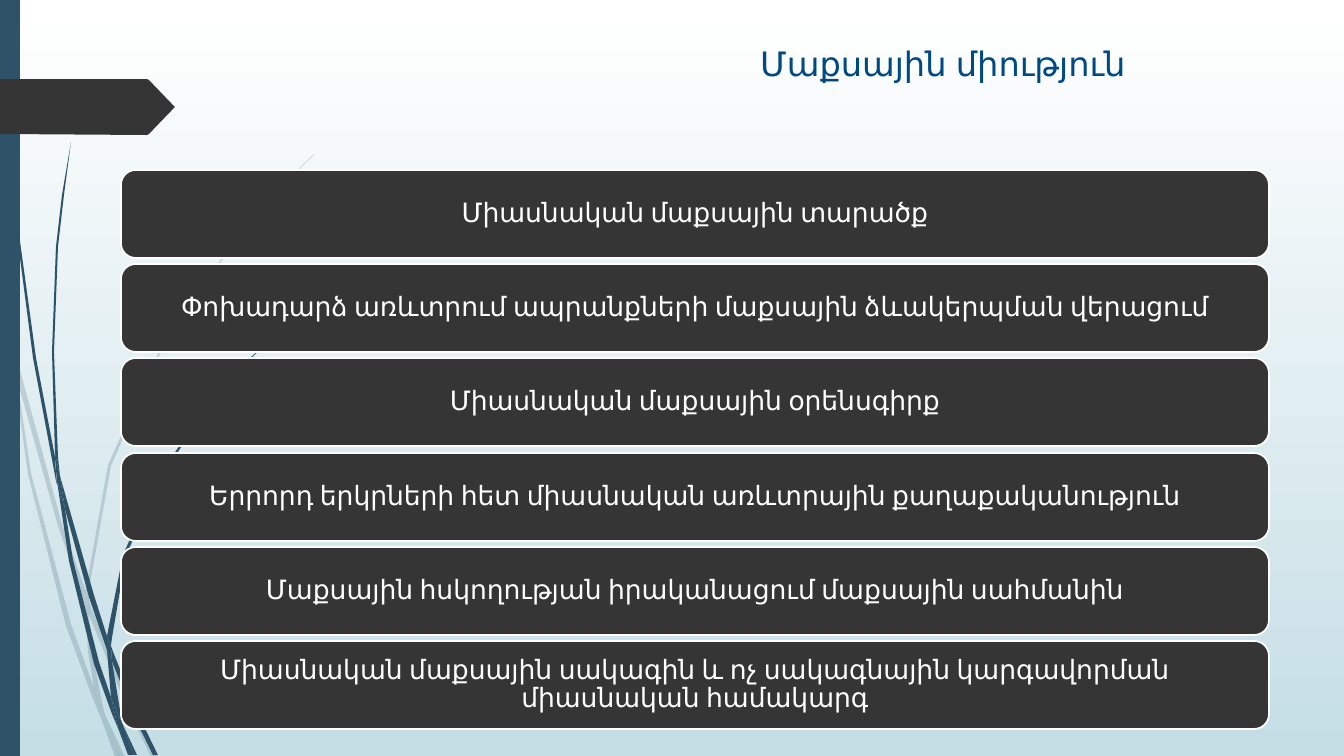
import dataclasses

import pptx
import pptx.dml.color
import pptx.enum.shapes
import pptx.enum.text
import pptx.oxml
import pptx.oxml.ns
import pptx.util

EMU_PER_PX = 914400 / 100.8
SLIDE_W, SLIDE_H = 1344, 756
TITLE_ONLY = 5


@dataclasses.dataclass(frozen=True)
class Theme:
    accent: str = "2E5369"
    dark: str = "353535"
    light: str = "FFFFFF"
    sky: str = "C5DEE5"
    heading: str = "004A84"
    heading_font: str = "Arial"
    body_font: str = "League Spartan"
    heading_size: int = 24
    body_size: int = 19
    outline: float = 1.25


HEADING = "Մաքսային միություն"
FEATURES = [
    "Միասնական մաքսային տարածք",
    "Փոխադարձ առևտրում ապրանքների մաքսային ձևակերպման վերացում",
    "Միասնական մաքսային օրենսգիրք",
    "Երրորդ երկրների հետ միասնական առևտրային քաղաքականություն",
    "Մաքսային հսկողության իրականացում մաքսային սահմանին",
    "Միասնական մաքսային սակագին և ոչ սակագնային կարգավորման միասնական համակարգ",
]

PALE_GRASS = [
    [(11, 353), (9, 325), (0, 284), (0, 301), (10, 347)],
    [(58, 526), (85, 604), (86, 591), (62, 524), (14, 348), (17, 379)],
    [(93, 612), (89, 601), (89, 615), (124, 700), (151, 757), (156, 757), (128, 698)],
    [(120, 757), (125, 757), (106, 717)],
    [(94, 688), (71, 624), (31, 473), (17, 379), (11, 353), (28, 474), (66, 626),
     (93, 699), (102, 720), (100, 713)],
    [(85, 604), (88, 651), (94, 688), (97, 698), (106, 717), (104, 712), (92, 651),
     (89, 615), (89, 613)],
    [(89, 589), (111, 466), (161, 352), (231, 247), (270, 200), (292, 176), (314, 155),
     (314, 154), (291, 176), (270, 199), (230, 246), (159, 351), (108, 465), (86, 589),
     (86, 591), (89, 601)],
    [(102, 720), (115, 757), (120, 757)],
    [(89, 613), (89, 615), (89, 601), (86, 591), (85, 604)],
    [(97, 698), (94, 688), (100, 713), (102, 720), (120, 757), (106, 717)],
]
DARK_GRASS = [
    [(7, 111), (17, 235), (33, 358), (56, 481), (57, 485), (55, 461), (55, 457),
     (36, 358), (19, 234), (8, 110), (5, 48), (4, 0), (3, 0), (4, 48)],
    [(89, 597), (107, 650), (107, 638), (107, 636), (94, 595), (60, 476), (65, 509)],
    [(114, 654), (111, 646), (112, 661), (133, 714), (153, 755), (158, 755), (137, 712)],
    [(111, 697), (99, 662), (73, 560), (65, 509), (57, 481), (69, 561), (94, 664),
     (112, 714), (118, 728), (117, 723)],
    [(60, 476), (58, 457), (54, 352), (58, 247), (64, 195), (71, 142), (62, 195),
     (56, 247), (52, 352), (55, 453)],
    [(134, 755), (137, 755), (123, 725)],
    [(57, 481), (65, 509), (60, 476), (55, 453), (55, 457)],
    [(112, 638), (126, 556), (159, 480), (207, 409), (233, 377), (247, 362), (263, 347),
     (262, 347), (247, 361), (233, 376), (206, 408), (157, 478), (123, 555), (107, 636),
     (111, 646)],
    [(118, 728), (128, 755), (132, 755)],
    [(107, 650), (111, 697), (117, 712), (123, 725), (122, 722), (112, 661), (110, 656)],
    [(107, 650), (110, 656), (112, 661), (111, 646), (107, 636), (107, 638)],
    [(117, 712), (111, 697), (117, 723), (118, 728), (131, 755), (134, 755), (123, 725)],
]
PAGE_TAG = [(175, 107), (173, 109), (149, 134), (147, 135), (0, 134), (0, 79),
            (147, 79), (149, 80), (173, 105)]


def px(length):
    return pptx.util.Emu(round(length * EMU_PER_PX))


def rgb(colour):
    return pptx.dml.color.RGBColor.from_string(colour)


def assign(target, values):
    for name, value in values.items():
        setattr(target, name, value)


class SlideBuilder:
    def __init__(self, slide, theme):
        self.slide, self.theme = slide, theme

    def background(self):
        fill = self.slide.background.fill
        fill.gradient()
        fill.gradient_angle = 270
        ends = (0, self.theme.light), (1, self.theme.sky)
        for stop, (position, colour) in zip(fill.gradient_stops, ends):
            stop.position = position
            stop.color.rgb = rgb(colour)

    def paint(self, shape, colour, opacity=100):
        shape.shadow.inherit = False
        shape.fill.solid()
        shape.fill.fore_color.rgb = rgb(colour)
        shape.line.fill.background()
        if opacity < 100:
            solid = shape._element.spPr.find(pptx.oxml.ns.qn("a:solidFill"))
            solid[0].append(pptx.oxml.parse_xml(
                f'<a:alpha {pptx.oxml.ns.nsdecls("a")} val="{opacity * 1000}"/>'))

    def outline(self, points, colour, opacity=100):
        """Draw a filled closed polygon through the points."""
        pen = self.slide.shapes.build_freeform(*points[0], scale=EMU_PER_PX)
        pen.add_line_segments(points[1:], close=True)
        self.paint(pen.convert_to_shape(), colour, opacity)

    def box(self, preset, left, top, width, height, colour):
        shape = self.slide.shapes.add_shape(
            preset, px(left), px(top), px(width), px(height))
        self.paint(shape, colour)
        return shape

    def set_text(self, frame, text, align, font, margins):
        assign(frame, {"word_wrap": True,
                       "vertical_anchor": pptx.enum.text.MSO_ANCHOR.MIDDLE,
                       "auto_size": pptx.enum.text.MSO_AUTO_SIZE.NONE, **margins})
        frame.text = text
        paragraph = frame.paragraphs[0]
        paragraph.alignment = align
        name, size, colour = font
        assign(paragraph.runs[0].font, {"name": name, "size": pptx.util.Pt(size)})
        paragraph.runs[0].font.color.rgb = rgb(colour)
        return paragraph

    def title(self, text, left, top, width, height):
        heading = self.slide.shapes.title
        assign(heading, {"left": px(left), "top": px(top),
                         "width": px(width), "height": px(height)})
        theme = self.theme
        self.set_text(heading.text_frame, text, pptx.enum.text.PP_ALIGN.RIGHT,
                      (theme.heading_font, theme.heading_size, theme.heading), {})

    def card(self, text, left, top, width, height):
        theme = self.theme
        card = self.box(pptx.enum.shapes.MSO_SHAPE.ROUNDED_RECTANGLE,
                        left, top, width, height, theme.dark)
        card.line.color.rgb = rgb(theme.light)
        card.line.width = pptx.util.Pt(theme.outline)
        sides = "left", "top", "right", "bottom"
        paragraph = self.set_text(card.text_frame, text, pptx.enum.text.PP_ALIGN.CENTER,
                                  (theme.body_font, theme.body_size, theme.light),
                                  {f"margin_{side}": px(8) for side in sides})
        paragraph.line_spacing = 0.9


def main():
    deck = pptx.Presentation()
    assign(deck, {"slide_width": px(SLIDE_W), "slide_height": px(SLIDE_H)})
    theme = Theme()
    page = SlideBuilder(deck.slides.add_slide(deck.slide_layouts[TITLE_ONLY]), theme)

    page.background()
    for blades, opacity in ((PALE_GRASS, 20), (DARK_GRASS, 100)):
        for blade in blades:
            page.outline(blade, theme.accent, opacity)
    page.box(pptx.enum.shapes.MSO_SHAPE.RECTANGLE, 0, 0, 20, SLIDE_H, theme.accent)
    page.outline(PAGE_TAG, theme.dark)

    page.title(HEADING, 323, 21, 813, 85)
    first_top, last_top = 170, 641
    pitch = (last_top - first_top) / (len(FEATURES) - 1)
    for row, feature in enumerate(FEATURES):
        page.card(feature, 121, round(first_top + row * pitch), 1148, 88)

    deck.save("out.pptx")


if __name__ == "__main__":
    main()
